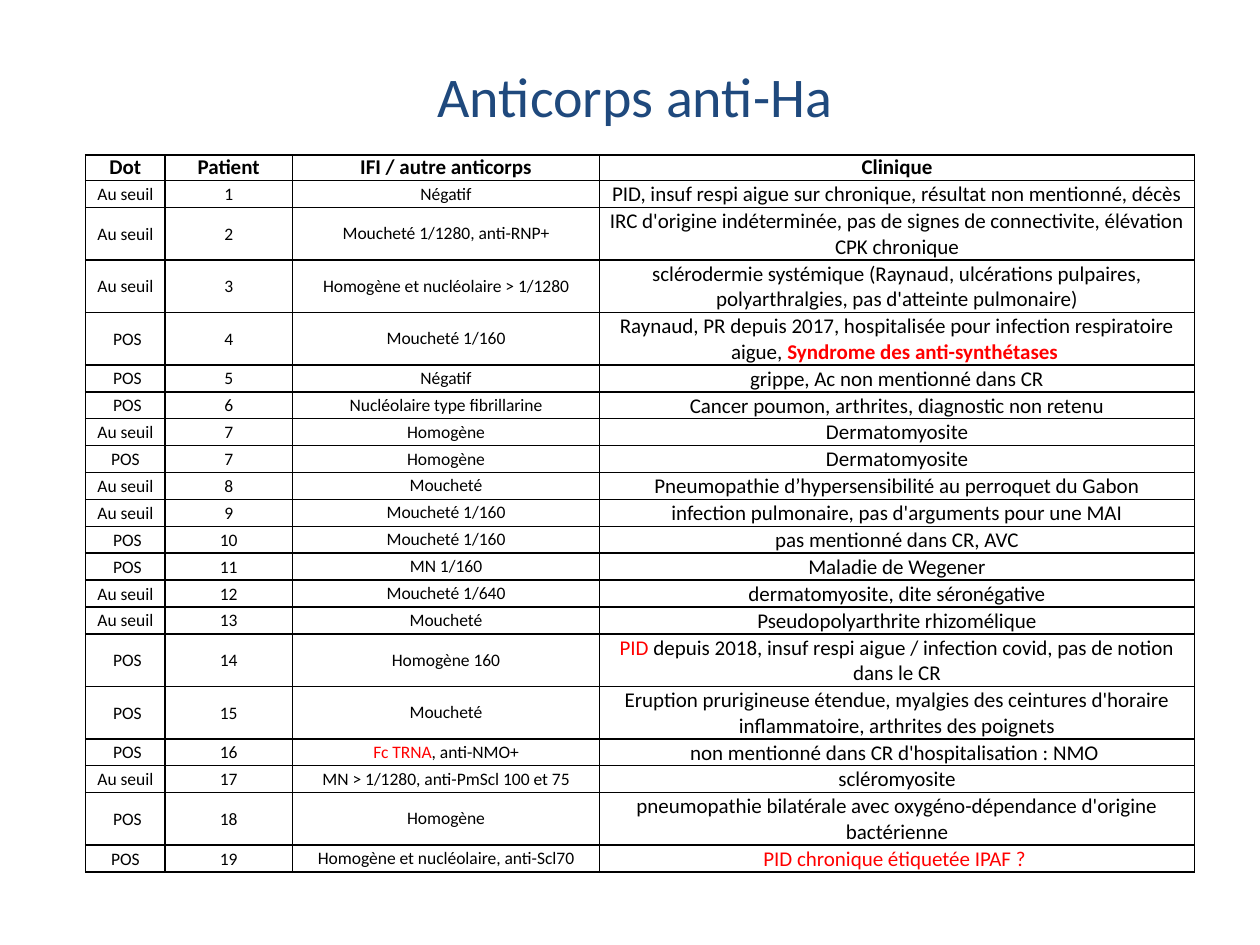
from dataclasses import dataclass

import pptx
import pptx.dml.color
import pptx.enum.text
import pptx.oxml
import pptx.util
from pptx.util import Inches


@dataclass(frozen=True)
class Theme:
    font: str = "Calibri"
    title: str = "1F497D"
    text: str = "000000"
    alert: str = "FF0000"
    title_size: int = 32
    large: int = 12
    small: int = 10


theme = Theme()
rgb = pptx.dml.color.RGBColor.from_string
CENTER = pptx.enum.text.PP_ALIGN.CENTER
MIDDLE = pptx.enum.text.MSO_ANCHOR.MIDDLE
BOTTOM = pptx.enum.text.MSO_ANCHOR.BOTTOM

# Segments between asterisks are red; those starting with "!" are also bold.
header = ("Dot", "Patient", "IFI / autre anticorps", "Clinique")
patients = [
    ("Au seuil", "1", "Négatif", "PID, insuf respi aigue sur chronique, résultat non mentionné, décès"),
    ("Au seuil", "2", "Moucheté 1/1280, anti-RNP+",
     "IRC d'origine indéterminée, pas de signes de connectivite, élévation CPK chronique"),
    ("Au seuil", "3", "Homogène et nucléolaire > 1/1280",
     "sclérodermie systémique (Raynaud, ulcérations pulpaires, polyarthralgies, pas d'atteinte pulmonaire)"),
    (" POS", "4", "Moucheté 1/160",
     "Raynaud, PR depuis 2017, hospitalisée pour infection respiratoire aigue, *!Syndrome des anti-synthétases *"),
    (" POS", "5", "Négatif", "grippe, Ac non mentionné dans CR"),
    (" POS", "6", "Nucléolaire type fibrillarine", "Cancer poumon, arthrites, diagnostic non retenu"),
    ("Au seuil", "7", "Homogène", "Dermatomyosite"),
    ("POS", "7", "Homogène", "Dermatomyosite"),
    ("Au seuil", "8", "Moucheté", "Pneumopathie d’hypersensibilité au perroquet du Gabon"),
    ("Au seuil", "9", "Moucheté 1/160", "infection pulmonaire, pas d'arguments pour une MAI"),
    (" POS", "10", "Moucheté 1/160", "pas mentionné dans CR, AVC"),
    (" POS", "11", "MN 1/160", "Maladie de Wegener"),
    ("Au seuil", "12", "Moucheté 1/640", "dermatomyosite, dite séronégative"),
    ("Au seuil", "13", "Moucheté", "Pseudopolyarthrite rhizomélique"),
    (" POS", "14", "Homogène 160",
     "*PID *depuis 2018, insuf respi aigue / infection covid, pas de notion dans le CR"),
    (" POS", "15", "Moucheté",
     "Eruption prurigineuse étendue, myalgies des ceintures d'horaire inflammatoire, arthrites des poignets"),
    (" POS", "16", "*Fc TRNA*, anti-NMO+", "non mentionné dans CR d'hospitalisation : NMO "),
    ("Au seuil", "17", "MN > 1/1280, anti-PmScl 100 et 75", "scléromyosite"),
    (" POS", "18", "Homogène", "pneumopathie bilatérale avec oxygéno-dépendance d'origine bactérienne"),
    ("POS", "19", "Homogène et nucléolaire, anti-Scl70", "*PID chronique étiquetée IPAF ? *"),
]


def add_borders(cell):
    tcPr = cell._tc.get_or_add_tcPr()
    for i, side in enumerate("LRTB"):
        tcPr.insert(i, pptx.oxml.parse_xml(
            f'<a:ln{side} w="12700" xmlns:a="http://schemas.openxmlformats.org/drawingml/2006/main">'
            f'<a:solidFill><a:srgbClr val="{theme.text}"/></a:solidFill></a:ln{side}>'))


def write_paragraph(p, text, size, color, bold=False):
    p.alignment = CENTER
    p.font.name = theme.font
    p.font.size = pptx.util.Pt(size)
    p.font.bold = bold
    for i, segment in enumerate(text.split("*")):
        if not segment:
            continue
        r = p.add_run()
        r.text = segment.lstrip("!")
        r.font.color.rgb = rgb(theme.alert if i % 2 else color)
        if segment.startswith("!"):
            r.font.bold = True


prs = pptx.Presentation()
prs.slide_width, prs.slide_height = Inches(10), Inches(7.5)
s = prs.slides.add_slide(prs.slide_layouts[6])

rows = [header] + patients
frame = s.shapes.add_table(len(rows), len(header), Inches(0.68), Inches(1.23), Inches(8.81), Inches(5.61))
table = frame.table
for column, width in zip(table.columns, (0.63, 1.01, 2.44, 4.72)):
    column.width = Inches(width)
for row in table.rows:
    row.height = Inches(0.19)
frame.height = Inches(5.61)

for i, row in enumerate(rows):
    for j, text in enumerate(row):
        cell = table.cell(i, j)
        is_header, is_clinical = i == 0, j == 3
        inset = Inches(0 if is_header or j == 2 else 0.01)
        cell.margin_left = cell.margin_right = cell.margin_top = inset
        cell.margin_bottom = 0
        cell.vertical_anchor = BOTTOM if is_clinical and not is_header else MIDDLE
        cell.fill.background()
        add_borders(cell)
        size = theme.large if is_header or is_clinical else theme.small
        write_paragraph(cell.text_frame.paragraphs[0], text, size, theme.text, is_header)

title = s.shapes.add_textbox(Inches(0.54), Inches(0.13), Inches(9), Inches(1.25))
tf = title.text_frame
tf.word_wrap = True
tf.vertical_anchor = MIDDLE
write_paragraph(tf.paragraphs[0], "Anticorps anti-Ha", theme.title_size, theme.title)

prs.save("out.pptx")
